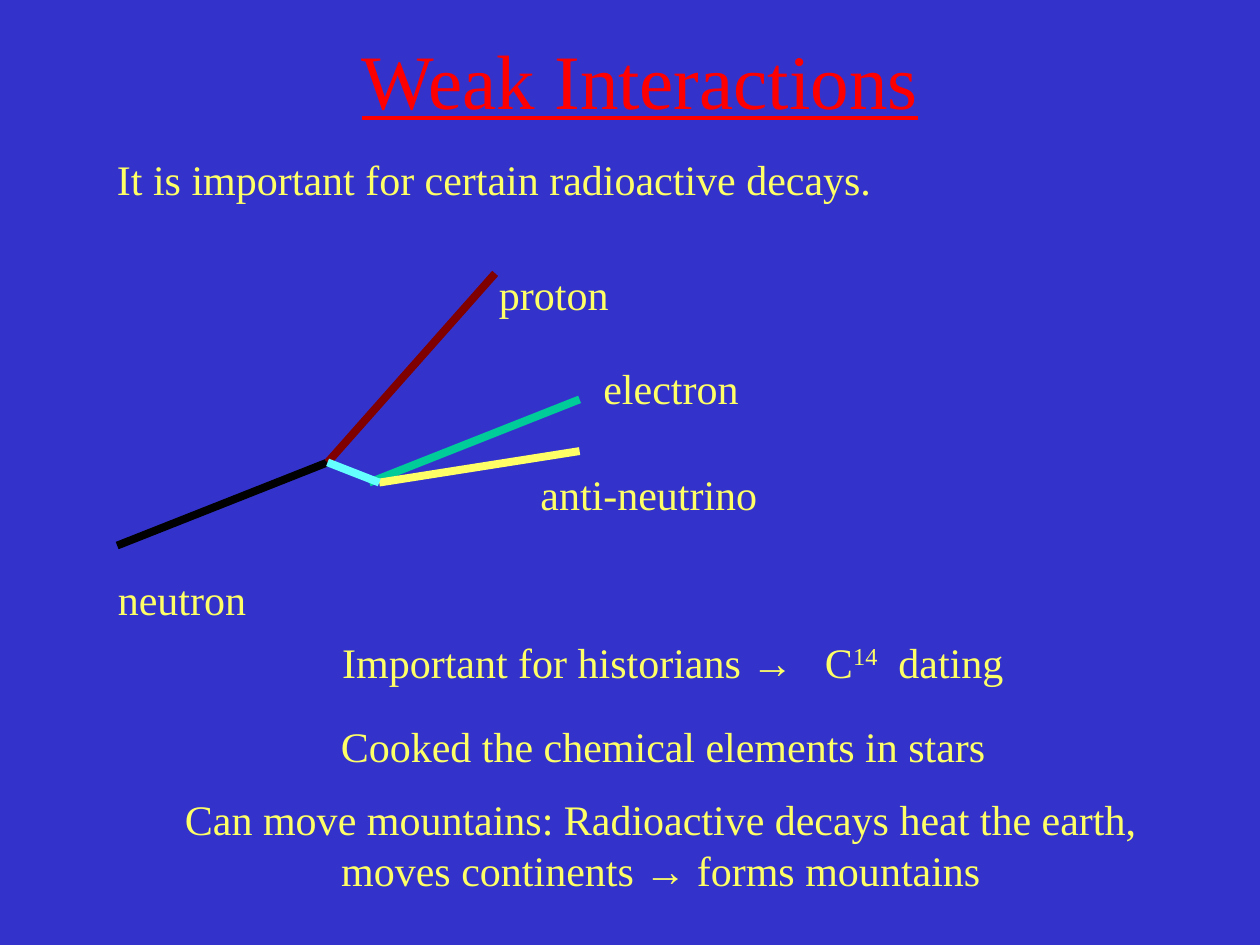
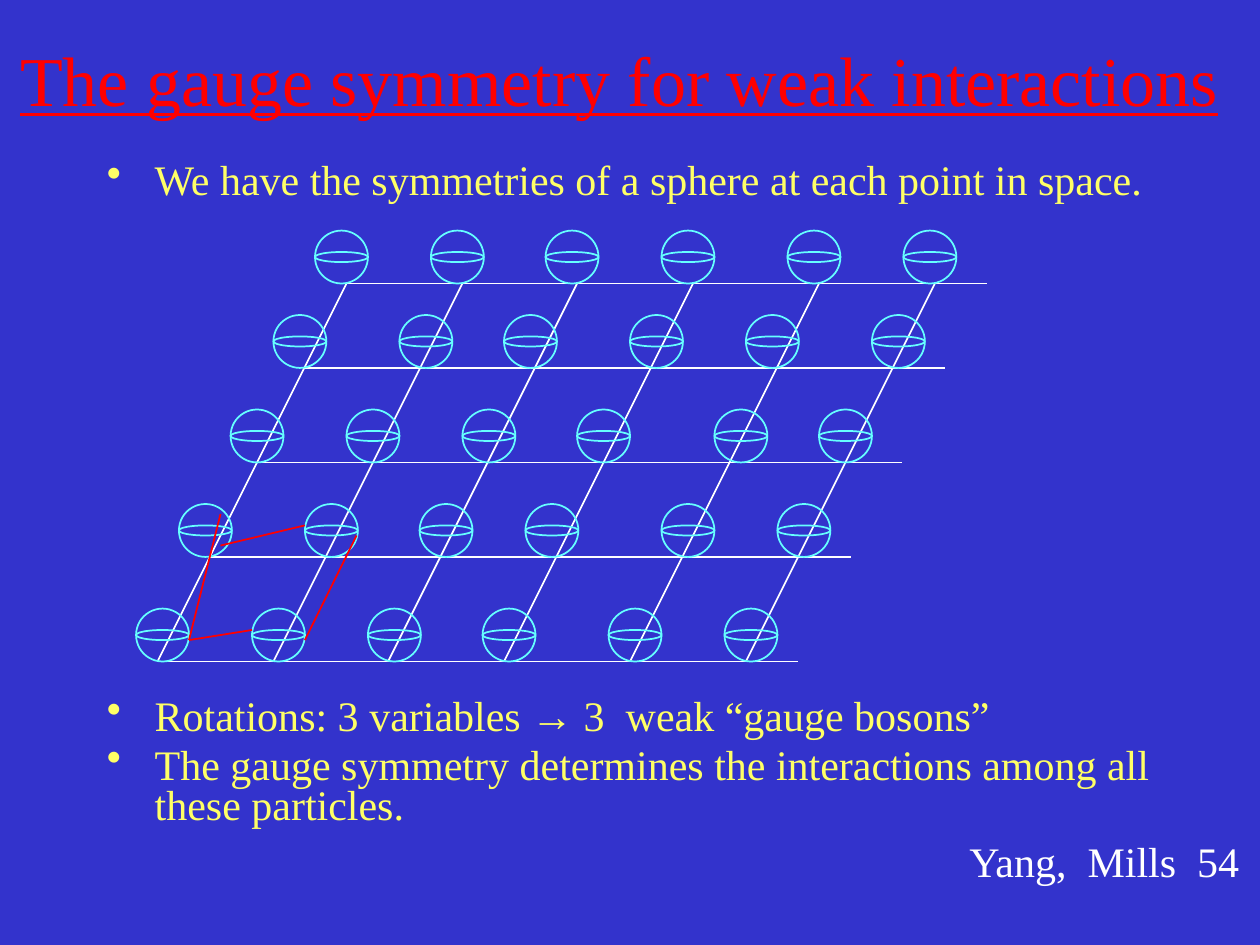
from dataclasses import dataclass

from lxml import etree
from pptx import Presentation
from pptx.dml.color import RGBColor
from pptx.enum.shapes import MSO_CONNECTOR, MSO_SHAPE
from pptx.enum.text import MSO_ANCHOR, MSO_AUTO_SIZE, PP_ALIGN
from pptx.oxml.ns import qn
from pptx.slide import Slide
from pptx.text.text import TextFrame
from pptx.util import Inches, Pt

LEFT, CENTER = PP_ALIGN.LEFT, PP_ALIGN.CENTER
TOP, MIDDLE = MSO_ANCHOR.TOP, MSO_ANCHOR.MIDDLE
STRAIGHT, OVAL = MSO_CONNECTOR.STRAIGHT, MSO_SHAPE.OVAL
NO_AUTOFIT = MSO_AUTO_SIZE.NONE
TITLE_ONLY = 5
FONT = "Times New Roman"
COLORS = {
    "background": "3333CC",
    "title": "FF0000",
    "text": "FFFF66",
    "credit": "FFFFFF",
    "neutron": "000000",
    "proton": "800000",
    "electron": "00CC99",
    "antineutrino": "FFFF66",
    "boson": "66FFFF",
    "sphere": "66FFFF",
    "lattice": "FFFFFF",
    "link": "FF0000",
}


@dataclass(frozen=True)
class Box:
    left: float
    top: float
    width: float
    height: float = 0.51


@dataclass(frozen=True)
class Caption:
    text: str
    box: Box
    color: str = "text"


@dataclass(frozen=True)
class Track:
    start: tuple[float, float]
    end: tuple[float, float]
    color: str


@dataclass(frozen=True)
class LatticeRow:
    sphere_top: float
    line_left: float
    sphere_lefts: tuple[float, ...]


DECAY_VERTEX = (2.6, 3.67)
BOSON_END = (3.01, 3.83)
DECAY_TRACKS = (
    Track((0.93, 4.33), DECAY_VERTEX, "neutron"),
    Track(DECAY_VERTEX, (3.93, 2.17), "proton"),
    Track((2.93, 3.83), (4.6, 3.17), "electron"),
    Track(BOSON_END, (4.6, 3.58), "antineutrino"),
    Track(BOSON_END, DECAY_VERTEX, "boson"),
)
DECAY_CAPTIONS = (
    Caption("neutron", Box(0.83, 4.5, 1.23)),
    Caption("proton", Box(3.85, 2.08, 1.09)),
    Caption("electron", Box(4.68, 2.83, 1.29)),
    Caption("anti-neutrino", Box(4.18, 3.67, 1.94)),
    Caption("Important for historians →   C^14^  dating", Box(2.58, 5, 5.52)),
    Caption("Cooked the chemical elements in stars", Box(2.58, 5.67, 5.37)),
    Caption(
        "Can move mountains: Radioactive decays heat the earth,\n"
        "moves continents → forms mountains",
        Box(1.33, 6.25, 7.83, 0.91),
    ),
)

SPHERE = 0.42
EQUATOR_DROP, EQUATOR_HEIGHT = 0.17, 0.08
ROW_LENGTH = 5.08
LATTICE_TOP, LATTICE_BOTTOM, SLANT = 2.25, 5.25, 1.5
COLUMN_FEET = (1.25, 2.17, 3.08, 4, 5, 5.92)
LATTICE_ROWS = (
    LatticeRow(1.83, 2.75, (2.5, 3.42, 4.33, 5.25, 6.25, 7.17)),
    LatticeRow(2.5, 2.42, (2.17, 3.17, 4, 5, 5.92, 6.92)),
    LatticeRow(3.25, 2.08, (1.83, 2.75, 3.67, 4.58, 5.67, 6.5)),
    LatticeRow(4, 1.67, (1.42, 2.42, 3.33, 4.17, 5.25, 6.17)),
    LatticeRow(4.83, 1.25, (1.08, 2, 2.92, 3.83, 4.83, 5.75)),
)
GAUGE_LINKS = (
    Track((1.5, 5.08), (2, 5), "link"),
    Track((1.5, 5.08), (1.75, 4.08), "link"),
    Track((1.75, 4.33), (2.42, 4.17), "link"),
    Track((2.42, 5.08), (2.83, 4.25), "link"),
)


def rgb(color: str) -> RGBColor:
    return RGBColor.from_string(COLORS[color])


def add_bullet(paragraph) -> None:
    properties = paragraph._p.get_or_add_pPr()
    properties.set("marL", str(Inches(0.38)))
    properties.set("indent", str(-Inches(0.38)))
    etree.SubElement(properties, qn("a:buChar")).set("char", "•")


def write_text(
    frame: TextFrame,
    text: str,
    *,
    size: float = 24,
    color: str = "text",
    align: PP_ALIGN = CENTER,
    anchor: MSO_ANCHOR = TOP,
    underline: bool = False,
    wrap: bool = True,
    bullets: bool = False,
    spacing: float = 1,
    gap: float = 0,
) -> None:
    """Write one paragraph per line; text between carets is superscript."""
    frame.auto_size = NO_AUTOFIT
    frame.word_wrap = wrap
    frame.vertical_anchor = anchor
    for index, line in enumerate(text.split("\n")):
        paragraph = frame.add_paragraph() if index else frame.paragraphs[0]
        if bullets:
            add_bullet(paragraph)
        paragraph.alignment = align
        paragraph.line_spacing = spacing
        paragraph.space_before = Pt(gap if index else 0)
        for part, words in enumerate(line.split("^")):
            run = paragraph.add_run()
            run.text = words
            run.font.name = FONT
            run.font.size = Pt(size)
            run.font.color.rgb = rgb(color)
            run.font.underline = underline
            if part % 2:
                run._r.get_or_add_rPr().set("baseline", "30000")


def inches(box: Box) -> tuple[Inches, ...]:
    return tuple(Inches(n) for n in (box.left, box.top, box.width, box.height))


def add_text(slide: Slide, text: str, box: Box, **text_format) -> None:
    write_text(slide.shapes.add_textbox(*inches(box)).text_frame, text, **text_format)


def add_caption(slide: Slide, caption: Caption) -> None:
    add_text(slide, caption.text, caption.box, color=caption.color, wrap=False)


def add_body(slide: Slide, text: str, box: Box, bullets: bool = False) -> None:
    add_text(slide, text, box, align=LEFT, bullets=bullets, spacing=0.8, gap=4.8)


def add_titled_slide(prs: Presentation, title: str, box: Box, size: float) -> Slide:
    slide = prs.slides.add_slide(prs.slide_layouts[TITLE_ONLY])
    heading = slide.shapes.title
    heading.left, heading.top, heading.width, heading.height = inches(box)
    write_text(heading.text_frame, title, size=size, color="title",
               anchor=MIDDLE, underline=True)
    return slide


def add_track(slide: Slide, track: Track, width: float) -> None:
    ends = (Inches(n) for n in (*track.start, *track.end))
    connector = slide.shapes.add_connector(STRAIGHT, *ends)
    connector.line.color.rgb = rgb(track.color)
    connector.line.width = Pt(width)
    etree.SubElement(connector._element.spPr, qn("a:effectLst"))


def add_ellipse(slide: Slide, box: Box) -> None:
    ellipse = slide.shapes.add_shape(OVAL, *inches(box))
    ellipse.shadow.inherit = False
    ellipse.fill.background()
    ellipse.line.color.rgb = rgb("sphere")
    ellipse.line.width = Pt(1)


def add_lattice(slide: Slide) -> None:
    """Draw the slanted grid with a sphere at each crossing."""
    for foot in COLUMN_FEET:
        column = Track((foot, LATTICE_BOTTOM), (foot + SLANT, LATTICE_TOP), "lattice")
        add_track(slide, column, 1)
    for row in LATTICE_ROWS:
        level = row.sphere_top + SPHERE
        line_right = row.line_left + ROW_LENGTH
        add_track(slide, Track((row.line_left, level), (line_right, level), "lattice"), 0.75)
        for left in row.sphere_lefts:
            add_ellipse(slide, Box(left, row.sphere_top, SPHERE, SPHERE))
            add_ellipse(slide, Box(left, row.sphere_top + EQUATOR_DROP,
                                   SPHERE, EQUATOR_HEIGHT))


def build_weak_interactions(prs: Presentation) -> None:
    slide = add_titled_slide(prs, "Weak Interactions", Box(0.83, 0, 8.5, 1.25), 44)
    add_body(slide, "It is important for certain radioactive decays.",
             Box(0.83, 1.25, 8.42))
    for track in DECAY_TRACKS:
        add_track(slide, track, 4.5)
    for caption in DECAY_CAPTIONS:
        add_caption(slide, caption)


def build_gauge_symmetry(prs: Presentation) -> None:
    slide = add_titled_slide(prs, "The gauge symmetry for weak interactions",
                             Box(0, 0, 9.83, 1.25), 40)
    add_body(slide, "We have the symmetries of a sphere at each point in space.",
             Box(0.75, 1.25, 8.5), bullets=True)
    add_lattice(slide)
    for link in GAUGE_LINKS:
        add_track(slide, link, 1)
    add_body(
        slide,
        "Rotations: 3 variables → 3  weak “gauge bosons”\n"
        "The gauge symmetry determines the interactions among all these particles.",
        Box(0.75, 5.5, 8.5, 1.2),
        bullets=True,
    )
    add_caption(slide, Caption("Yang,  Mills  54", Box(7.58, 6.58, 2.37), "credit"))


def main() -> None:
    prs = Presentation()
    prs.slide_width, prs.slide_height = Inches(10), Inches(7.5)
    background = prs.slide_master.background.fill
    background.solid()
    background.fore_color.rgb = rgb("background")
    build_weak_interactions(prs)
    build_gauge_symmetry(prs)
    prs.save("out.pptx")


if __name__ == "__main__":
    main()
